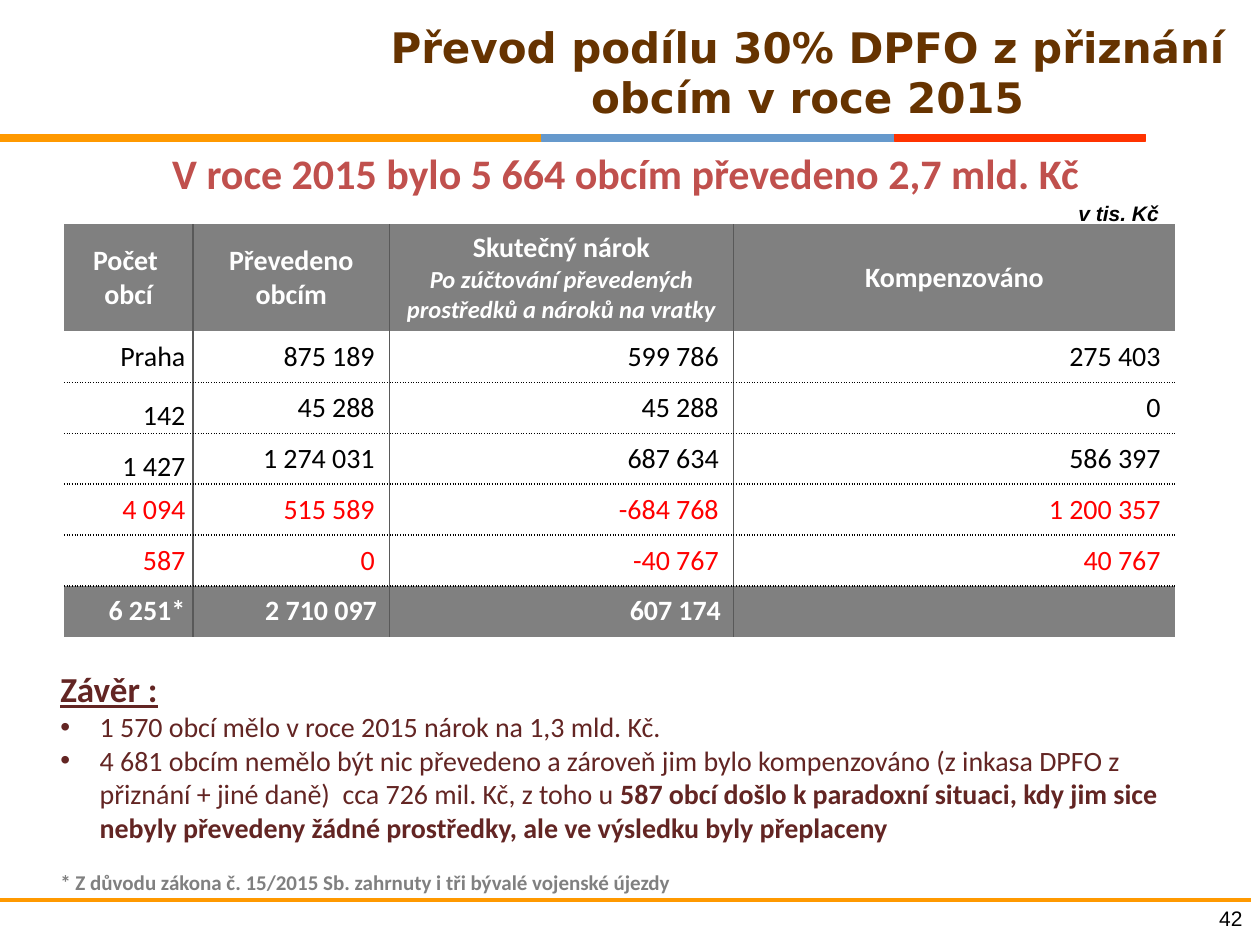
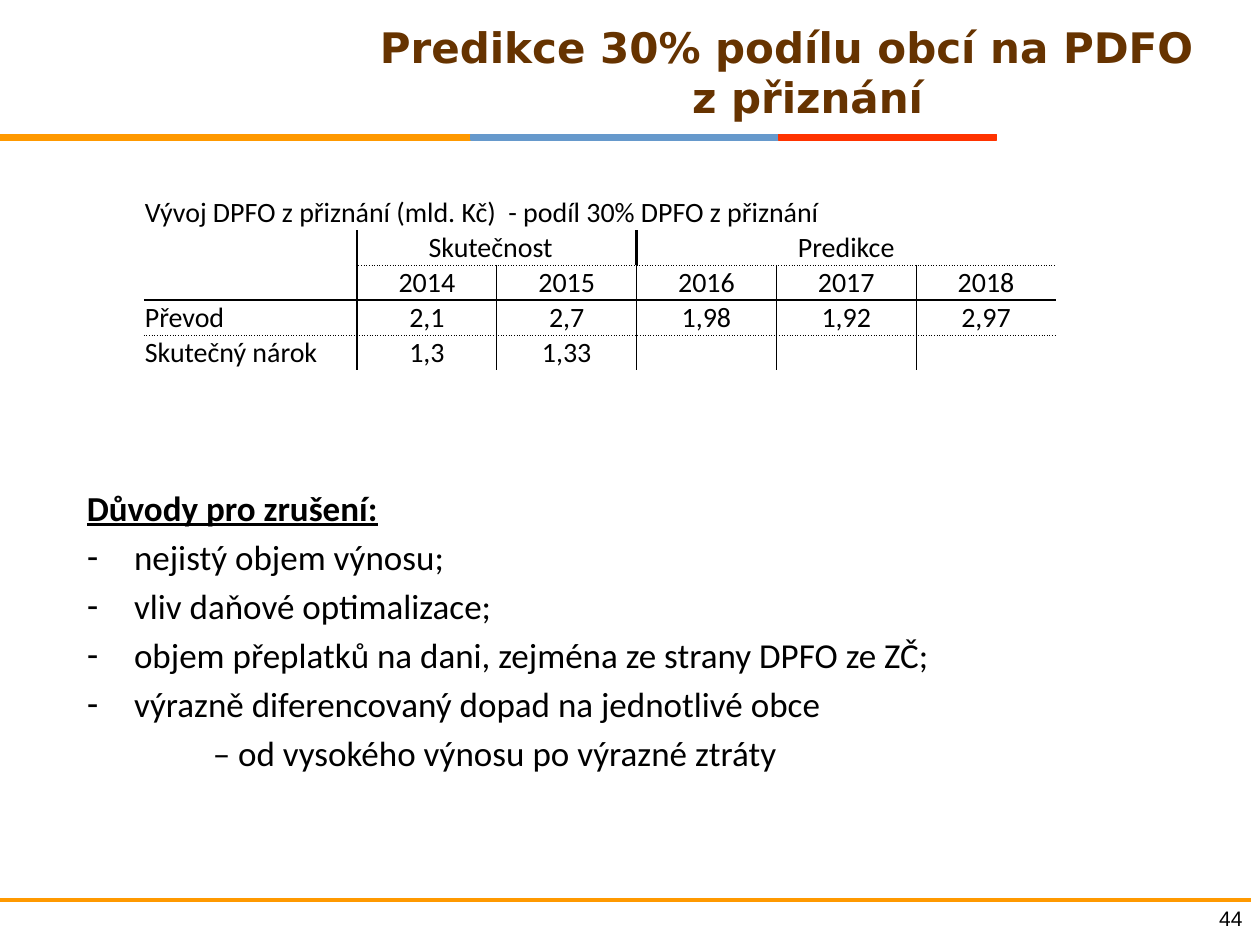
from itertools import product

from lxml import etree
from pptx import Presentation
from pptx.dml.color import RGBColor
from pptx.enum import shapes, text
from pptx.oxml import ns
from pptx.util import Pt

ORANGE = RGBColor(0xFF, 0x99, 0x00)
BLUE = RGBColor(0x66, 0x99, 0xCC)
SCARLET = RGBColor(0xFF, 0x33, 0x00)
BROWN = RGBColor(0x66, 0x33, 0x00)
ROSE = RGBColor(0xC0, 0x50, 0x4D)
WINE = RGBColor(0x63, 0x25, 0x23)
RED = RGBColor(0xFF, 0x00, 0x00)
BLACK = RGBColor(0x00, 0x00, 0x00)
WHITE = RGBColor(0xFF, 0xFF, 0xFF)
GREY = RGBColor(0x80, 0x80, 0x80)
DARK_GREY = RGBColor(0x59, 0x59, 0x59)

LEFT, CENTER, RIGHT = text.PP_ALIGN.LEFT, text.PP_ALIGN.CENTER, text.PP_ALIGN.RIGHT
TOP, MIDDLE, BOTTOM = text.MSO_ANCHOR.TOP, text.MSO_ANCHOR.MIDDLE, text.MSO_ANCHOR.BOTTOM

TITLE = dict(name="DejaVu Sans", size=Pt(24), bold=True, color=BROWN)
SMALL = dict(name="Arial", size=Pt(12), color=BLACK)
BODY = dict(name="Calibri", size=Pt(16), color=BLACK)
LARGE = BODY | dict(size=Pt(20))
HEADING = dict(bold=True, underline=True)

BAND = ((ORANGE, 0.4725), (BLUE, 0.3085), (SCARLET, 0.219))
PLAIN_TABLE = "{2D5ABB26-0587-4C30-8999-92F81FD0307C}"


def add_para(frame, para, spans, style, align=LEFT, before=0, **margins):
    para.alignment = align
    if before:
        para.space_before = Pt(before)
    for wording, extra in spans:
        for number, line in enumerate(wording.split("\n")):
            if number:
                para.add_line_break()
            span = para.add_run()
            span.text = line
            for key, value in (style | extra).items():
                if key == "color":
                    span.font.color.rgb = value
                else:
                    setattr(span.font, key, value)
    properties = para._p.get_or_add_pPr()
    bullet = margins.pop("bullet", None)
    for key, value in margins.items():
        properties.set(key, str(Pt(value)))
    if bullet:
        etree.SubElement(properties, ns.qn("a:buFont"), typeface="Arial")
        etree.SubElement(properties, ns.qn("a:buChar"), char=bullet)


def fill_frame(frame, paras, style):
    for number, (spans, layout) in enumerate(paras):
        para = frame.add_paragraph() if number else frame.paragraphs[0]
        if isinstance(spans, str):
            spans = [(spans, {})]
        add_para(frame, para, spans, style, **layout)


def add_text(page, place, paras, style, anchor=TOP, wrap=True):
    box = page.shapes.add_textbox(*map(Pt, place))
    box.text_frame.word_wrap = wrap
    box.text_frame.vertical_anchor = anchor
    fill_frame(box.text_frame, paras, style)


def add_frame(page, title, number, band_width, band_height):
    left = 0
    for color, share in BAND:
        width = band_width * share
        bar = page.shapes.add_shape(shapes.MSO_SHAPE.RECTANGLE, Pt(left), Pt(77),
                                    Pt(width), Pt(band_height))
        bar.shadow.inherit = False
        bar.fill.solid()
        bar.fill.fore_color.rgb = bar.line.color.rgb = color
        bar.line.width = Pt(0.75)
        left += width
    rule = page.shapes.add_connector(shapes.MSO_CONNECTOR.STRAIGHT,
                                     0, Pt(514.4), Pt(715), Pt(514.4))
    rule.line.color.rgb = ORANGE
    rule.line.width = Pt(2)
    etree.SubElement(rule._element.spPr, ns.qn("a:effectLst"))
    add_text(page, (201.6, 1.4, 519.8, 79.2), title, TITLE, MIDDLE)
    add_text(page, (683.3, 514.1, 33.8, 21.6), [(number, dict(align=RIGHT))], SMALL)


def add_grid(page, left, top, widths, heights):
    holder = page.shapes.add_table(len(heights), len(widths), Pt(left), Pt(top),
                                   Pt(sum(widths)), Pt(sum(heights)))
    table = holder.table
    table.first_row = table.horz_banding = False
    table._tbl.tblPr.find(ns.qn("a:tableStyleId")).text = PLAIN_TABLE
    for column, width in zip(table.columns, widths):
        column.width = Pt(width)
    for row, height in zip(table.rows, heights):
        row.height = Pt(height)
    return table


def set_borders(cell, edges):
    properties = cell._tc.get_or_add_tcPr()
    for side, edge in zip("LRTB", edges):
        if edge:
            color, width, dash = edge
            line = etree.SubElement(properties, ns.qn("a:ln" + side), w=str(Pt(width)))
            paint = etree.SubElement(line, ns.qn("a:solidFill"))
            etree.SubElement(paint, ns.qn("a:srgbClr"), val=str(color))
            etree.SubElement(line, ns.qn("a:prstDash"), val=dash)


def fill_cell(cell, paras, style, anchor, insets=None, fill=None):
    cell.vertical_anchor = anchor
    if insets:
        for side, inset in zip(("left", "top", "right", "bottom"), insets):
            setattr(cell, "margin_" + side, Pt(inset))
    if fill is None:
        cell.fill.background()
    else:
        cell.fill.solid()
        cell.fill.fore_color.rgb = fill
    if paras:
        fill_frame(cell.text_frame, paras, style)
    else:
        etree.SubElement(cell.text_frame.paragraphs[0]._p, ns.qn("a:endParaRPr"),
                         sz=str(int(style["size"].pt * 100)))


def add_transfer_table(page, left, top):
    headers = (
        ["Počet \nobcí"],
        ["Převedeno", "obcím"],
        ["Skutečný nárok",
         [("Po zúčtování převedených prostředků a nároků na vratky",
           dict(size=Pt(14), italic=True))]],
        ["Kompenzováno"],
    )
    amounts = (
        ("Praha", "875 189", "599 786", "275 403"),
        ("142", "45 288", "45 288", "0"),
        ("1 427", "1 274 031", "687 634", "586 397"),
        ("4 094", "515 589", "-684 768", "1 200 357"),
        ("587", "0", "-40 767", "40 767"),
        ("6 251*", "2 710 097", "607 174", ""),
    )
    total = len(amounts)
    table = add_grid(page, left, top, (73.8, 112.2, 196.6, 252.5), [61.2] + [29.1] * total)
    upright = (DARK_GREY, 1, "solid")
    dotted = (BLACK, 1, "sysDot")
    for row, column in product(range(total + 1), range(4)):
        cell = table.cell(row, column)
        set_borders(cell, (column > 0 and upright, column < 3 and upright,
                           1 < row < total and dotted, 0 < row < total - 1 and dotted))
        shaded = row in (0, total)
        style = BODY | dict(bold=shaded,
                            color=WHITE if shaded else RED if row > 3 else BLACK)
        fill = GREY if shaded else None
        if row == 0:
            paras = [(line, dict(align=CENTER)) for line in headers[column]]
            fill_cell(cell, paras, style, MIDDLE, fill=fill)
            continue
        amount = amounts[row - 1][column]
        inset = 4.5 if column == 0 else 7.2 if row == total else 8.5
        anchor = BOTTOM if column == 0 and row in (2, 3) else MIDDLE
        fill_cell(cell, [(amount, dict(align=RIGHT))] if amount else [],
                  style, anchor, (0, 0, inset, 0), fill)


def add_forecast_table(page, left, top):
    rows = (
        ("Vývoj DPFO z přiznání (mld. Kč)  - podíl 30% DPFO z přiznání",) + ("",) * 5,
        ("", "Skutečnost", "", "Predikce", "", ""),
        ("", "2014", "2015", "2016", "2017", "2018"),
        ("Převod", "2,1", "2,7", "1,98", "1,92", "2,97"),
        ("Skutečný nárok", "1,3", "1,33", "", "", ""),
    )
    table = add_grid(page, left, top, [121.8] + [79.9] * 5, [20.02] * 5)
    spans = (((0, 0), (0, 5)), ((1, 0), (2, 0)), ((1, 1), (1, 2)), ((1, 3), (1, 5)))
    for start, end in spans:
        table.cell(*start).merge(table.cell(*end))
    thin, medium, thick = ((BLACK, width, "solid") for width in (0.5, 1, 1.5))
    dotted = (BLACK, 0.25, "sysDot")
    uprights = {1: thick, 2: thin, 3: medium, 4: thin, 5: thin}
    levels = {2: dotted, 3: thick, 4: dotted}

    def upright(row, edge):
        hidden = row == 0 or row == 1 and edge not in (1, 3)
        return None if hidden else uprights.get(edge)

    def level(edge, column):
        return None if edge == 2 and column == 0 else levels.get(edge)

    for row, column in product(range(5), range(6)):
        cell = table.cell(row, column)
        set_borders(cell, (upright(row, column), upright(row, column + 1),
                           level(row, column), level(row + 1, column)))
        wording = rows[row][column]
        layout = dict(align=CENTER if column else LEFT)
        if wording == "Skutečnost":
            layout["marR"] = 7
        fill_cell(cell, [(wording, layout)] if wording else [], BODY, BOTTOM,
                  (0.6, 0.6, 0.6, 0))


def add_conclusion(page, place):
    item = dict(marL=22.5, indent=-22.5, bullet="•")
    add_text(page, place, [
        ([("Závěr :", HEADING | dict(size=Pt(20)))], {}),
        ("1 570 obcí mělo v roce 2015 nárok na 1,3 mld. Kč.", item),
        ([("4 681 obcím nemělo být nic převedeno a zároveň jim bylo kompenzováno "
           "(z inkasa DPFO z přiznání + jiné daně)  cca 726 mil. Kč, z toho u", {}),
          (" 587 obcí došlo k paradoxní situaci, kdy jim sice nebyly převedeny žádné "
           "prostředky, ale ve výsledku byly přeplaceny", dict(bold=True))], item),
        ([("* Z důvodu zákona č. 15/2015 Sb. zahrnuty i tři bývalé vojenské újezdy",
           dict(size=Pt(12), bold=True, color=GREY))], dict(before=14.6)),
    ], BODY | dict(color=WINE))


def add_reasons(page, place):
    reasons = ("nejistý objem výnosu;", "vliv daňové optimalizace;",
               "objem přeplatků na dani, zejména ze strany DPFO ze ZČ;",
               "výrazně diferencovaný dopad na jednotlivé obce")
    item = dict(before=4, marL=27, indent=-27, bullet="-")
    add_text(page, place,
             [([("Důvody pro zrušení:", HEADING)], {})]
             + [(reason, item) for reason in reasons]
             + [("– od vysokého výnosu po výrazné ztráty",
                 dict(before=4, marL=72, indent=0))], LARGE)


def build_transfer_page(page):
    add_frame(page, [("Převod podílu 30% DPFO z přiznání obcím v roce 2015",
                      dict(align=CENTER))], "42", 654.6, 3.6)
    add_text(page, (14.4, 80.6, 686.2, 40),
             [("V roce 2015 bylo 5 664 obcím převedeno 2,7 mld. Kč", dict(align=CENTER))],
             BODY | dict(size=Pt(24), bold=True, color=ROSE))
    add_transfer_table(page, 36.6, 128.2)
    add_conclusion(page, (27.4, 378, 671.8, 138.2))
    add_text(page, (609.1, 110.9, 61.2, 21.6), [("v tis. Kč", {})],
             SMALL | dict(bold=True, italic=True), wrap=False)


def build_forecast_page(page):
    add_frame(page, [("Predikce 30% podílu obcí na PDFO", dict(align=CENTER, marR=24)),
                     ("z přiznání", dict(align=CENTER, marL=0, marR=0))],
              "44", 569.5, 3)
    add_forecast_table(page, 82.2, 111.5)
    add_reasons(page, (42.5, 274.3, 627.1, 222.5))


def main():
    deck = Presentation()
    deck.slide_width, deck.slide_height = Pt(720), Pt(540)
    for build in (build_transfer_page, build_forecast_page):
        build(deck.slides.add_slide(deck.slide_layouts[6]))
    deck.save("out.pptx")


if __name__ == "__main__":
    main()
